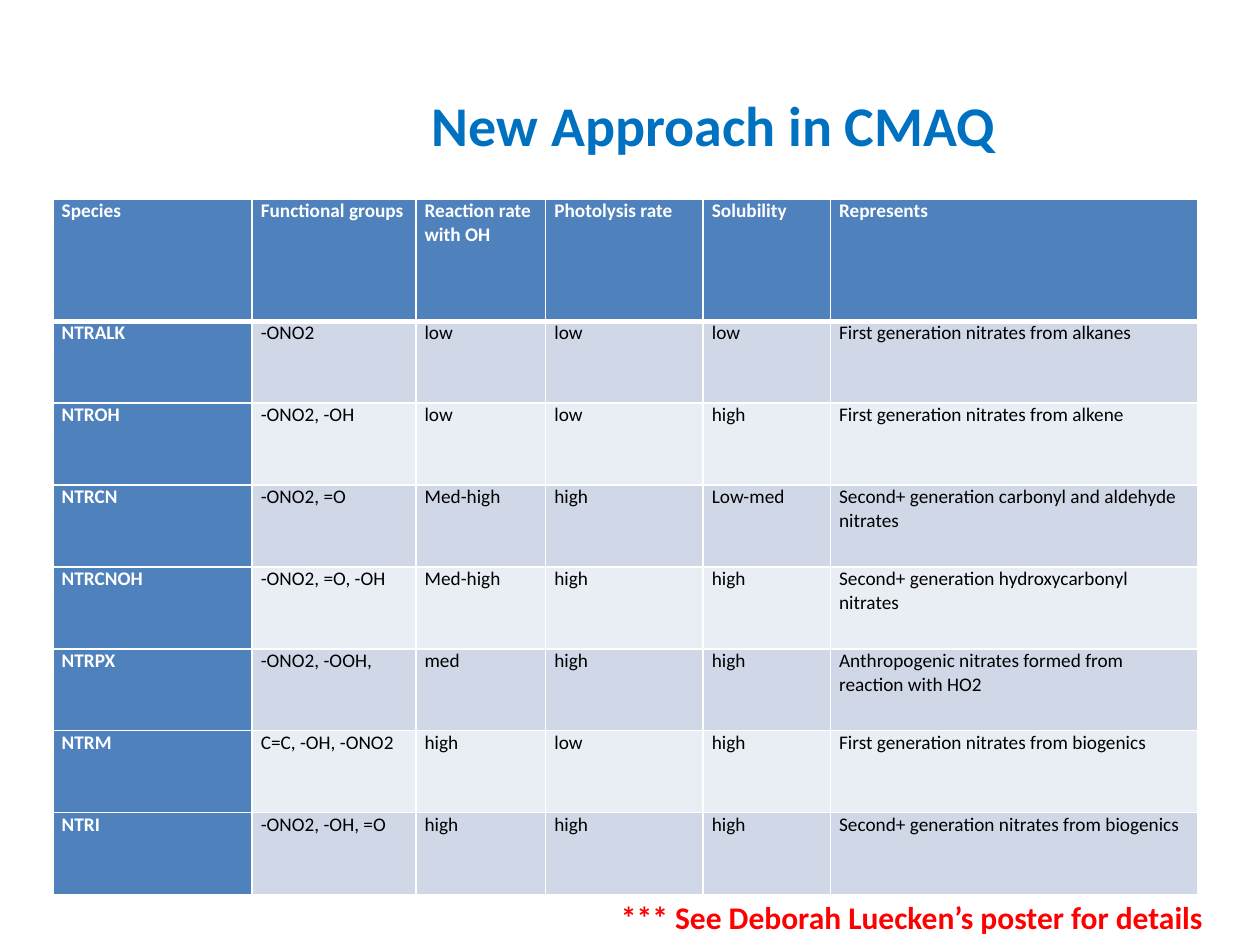
from lxml import etree
from pptx import Presentation
from pptx.dml.color import RGBColor
from pptx.enum.text import MSO_ANCHOR
from pptx.oxml.ns import qn
from pptx.util import Inches, Pt

TOP = MSO_ANCHOR.TOP

THEME = {
    "font": "Calibri",
    "title": "0070C0", "note": "FF0000",
    "head": "4F81BD", "bands": ("D0D8E8", "E9EDF4"),
    "light": "FFFFFF", "dark": "000000",
    "title_size": 32, "note_size": 18, "cell_size": 11,
    "thin": 1, "thick": 3,
}

TITLE = "New Approach in CMAQ"
NOTE = "*** See Deborah Luecken’s poster for details"
HEADINGS = ("Species", "Functional groups", "Reaction rate with OH",
            "Photolysis rate", "Solubility", "Represents")
SPECIES = [
    ("NTRALK", "-ONO2", "low", "low", "low",
     "First generation nitrates from alkanes"),
    ("NTROH", "-ONO2, -OH", "low", "low", "high",
     "First generation nitrates from alkene"),
    ("NTRCN", "-ONO2, =O", "Med-high", "high", "Low-med",
     "Second+ generation carbonyl and aldehyde nitrates"),
    ("NTRCNOH", "-ONO2, =O, -OH", "Med-high", "high", "high",
     "Second+ generation hydroxycarbonyl nitrates"),
    ("NTRPX", "-ONO2, -OOH,", "med", "high", "high",
     "Anthropogenic nitrates formed from reaction with HO2"),
    ("NTRM", "C=C, -OH, -ONO2", "high", "low", "high",
     "First generation nitrates from biogenics"),
    ("NTRI", "-ONO2, -OH, =O", "high", "high", "high",
     "Second+ generation nitrates from biogenics"),
]

SLIDE_SIZE = (10, 7.5)
TITLE_AREA = (3.33, 0.67, 6.33, 0.75)
NOTE_AREA = (4.83, 7.08, 5, 0.4)
TABLE_CORNER = (0.42, 1.58)
COLUMN_WIDTHS = (1.58, 1.3, 1.03, 1.25, 1.01, 2.92)
HEAD_HEIGHT, ROW_HEIGHT = 0.97, 0.65
CELL_INSET = 0.07


def write(frame, text, size, color, bold):
    frame.text = text
    font = frame.paragraphs[0].runs[0].font
    font.name, font.size, font.bold = THEME["font"], Pt(size), bold
    font.color.rgb = RGBColor.from_string(color)


def add_line_of_text(page, area, text, size, color):
    frame = page.shapes.add_textbox(*map(Inches, area)).text_frame
    frame.word_wrap = True
    frame.vertical_anchor = TOP
    write(frame, text, size, color, True)


def set_borders(cell, widths):
    """Draw the cell's edges; they must come before its fill in the XML."""
    properties = cell._tc.get_or_add_tcPr()
    for side, width in widths.items():
        line = etree.SubElement(properties, qn(f"a:ln{side}"), w=str(Pt(width)))
        fill = etree.SubElement(line, qn("a:solidFill"))
        etree.SubElement(fill, qn("a:srgbClr"), val=THEME["light"])


def style_cell(cell, text, row, column):
    thin, thick = THEME["thin"], THEME["thick"]
    is_label = row == 0 or column == 0
    set_borders(cell, {"L": thin, "R": thin,
                       "T": thick if row == 1 else thin,
                       "B": thick if row == 0 else thin})
    cell.fill.solid()
    cell.fill.fore_color.rgb = RGBColor.from_string(
        THEME["head"] if is_label else THEME["bands"][(row - 1) % 2])
    cell.margin_left = cell.margin_right = Inches(CELL_INSET)
    cell.margin_top = cell.margin_bottom = 0
    cell.vertical_anchor = TOP
    write(cell.text_frame, text, THEME["cell_size"],
          THEME["light" if is_label else "dark"], is_label)


def add_species_table(page):
    rows = [HEADINGS, *SPECIES]
    heights = [HEAD_HEIGHT] + [ROW_HEIGHT] * len(SPECIES)
    size = (sum(COLUMN_WIDTHS), sum(heights))
    table = page.shapes.add_table(
        len(rows), len(HEADINGS), *map(Inches, TABLE_CORNER + size)).table
    for column, width in zip(table.columns, COLUMN_WIDTHS):
        column.width = Inches(width)
    for row, height in zip(table.rows, heights):
        row.height = Inches(height)
    for r, texts in enumerate(rows):
        for c, text in enumerate(texts):
            style_cell(table.cell(r, c), text, r, c)


def main():
    deck = Presentation()
    deck.slide_width, deck.slide_height = map(Inches, SLIDE_SIZE)
    page = deck.slides.add_slide(deck.slide_layouts[6])
    add_species_table(page)
    add_line_of_text(page, TITLE_AREA, TITLE, THEME["title_size"], THEME["title"])
    add_line_of_text(page, NOTE_AREA, NOTE, THEME["note_size"], THEME["note"])
    deck.save("out.pptx")


if __name__ == "__main__":
    main()
